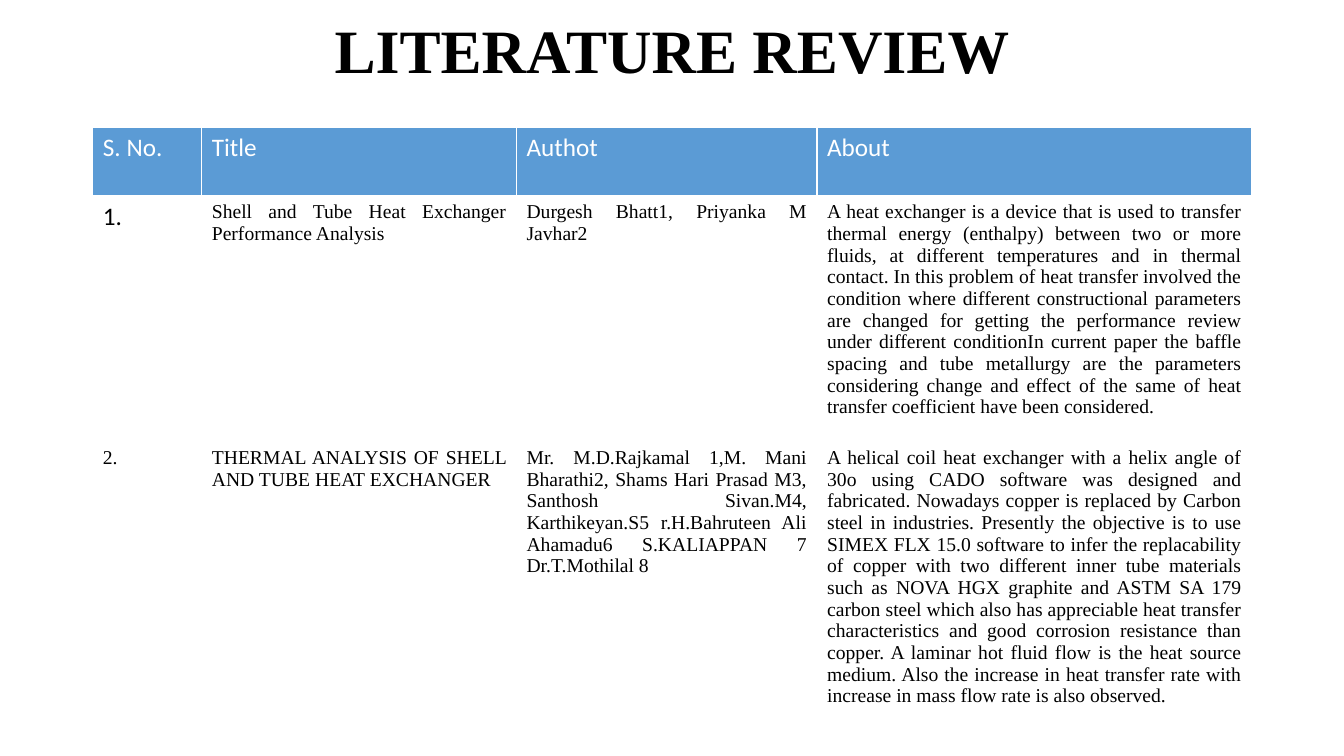
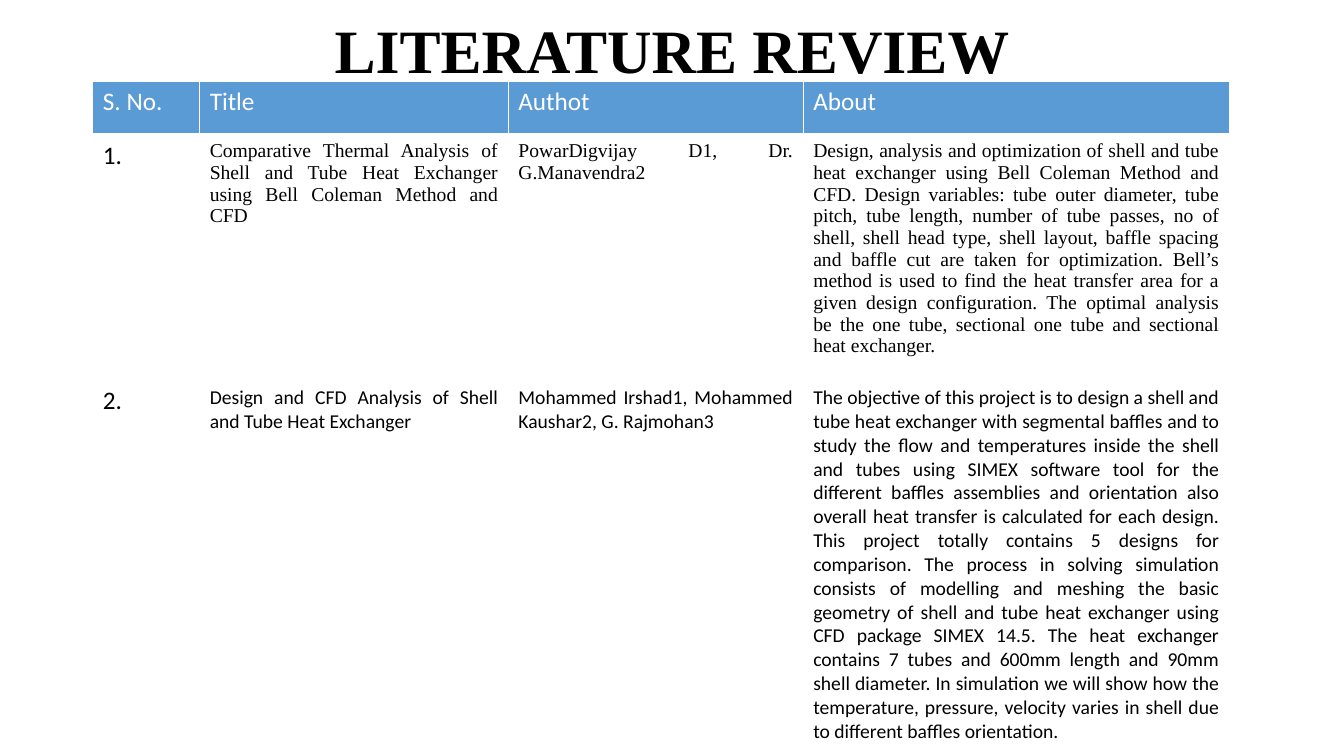
from dataclasses import dataclass

from lxml import etree
from pptx import Presentation
from pptx.dml.color import RGBColor
from pptx.enum.text import MSO_ANCHOR, PP_ALIGN
from pptx.oxml.ns import qn
from pptx.util import Cm, Pt

CENTER = PP_ALIGN.CENTER
JUSTIFY = PP_ALIGN.JUSTIFY
LEFT = PP_ALIGN.LEFT
MIDDLE = MSO_ANCHOR.MIDDLE


@dataclass(frozen=True)
class Theme:
    ink: str = "000000"
    paper: str = "FFFFFF"
    header: str = "5B9BD5"
    sans: str = "Calibri"
    serif: str = "Times New Roman"
    title_size: int = 44
    label_size: int = 18
    body_size: int = 14
    border: int = 1
    header_border: int = 3


THEME = Theme()
LABEL = (THEME.sans, THEME.label_size)
SERIF_BODY = (THEME.serif, THEME.body_size)
SANS_BODY = (THEME.sans, THEME.body_size)

TITLE = "LITERATURE REVIEW"
HEADERS = ["S. No.", "Title", "Authot", "About"]
COLUMN_SHARES = [1.08, 3.12, 2.98, 4.31]
MARGIN = 2.34


class Deck:
    def __init__(self, theme):
        self.theme = theme
        self.prs = Presentation()
        self.prs.slide_width = Cm(33.87)
        self.prs.slide_height = Cm(19.05)
        self.s = None

    def add_slide(self):
        self.s = self.prs.slides.add_slide(self.prs.slide_layouts[6])

    def set_text(self, tf, text, style, color, align, bold=False):
        tf.text = text
        p = tf.paragraphs[0]
        p.alignment = align
        font = p.runs[0].font
        font.name, size = style
        font.size = Pt(size)
        font.bold = bold
        font.color.rgb = RGBColor.from_string(color)
        return p

    def title(self, text):
        sp = self.s.shapes.add_textbox(Cm(MARGIN), Cm(-0.48), Cm(29.21), Cm(3.68))
        tf = sp.text_frame
        tf.word_wrap = True
        tf.vertical_anchor = MIDDLE
        style = (self.theme.serif, self.theme.title_size)
        p = self.set_text(tf, text, style, self.theme.ink, CENTER, bold=True)
        p.line_spacing = 0.9

    def borders(self, cell, bottom):
        tc_pr = cell._tc.get_or_add_tcPr()
        widths = {"lnL": self.theme.border, "lnR": self.theme.border,
                  "lnT": self.theme.border, "lnB": bottom}
        for i, (tag, width) in enumerate(widths.items()):
            ln = etree.Element(qn(f"a:{tag}"), w=str(Pt(width)))
            fill = etree.SubElement(ln, qn("a:solidFill"))
            etree.SubElement(fill, qn("a:srgbClr"), val=self.theme.paper)
            tc_pr.insert(i, ln)

    def cell(self, cell, text, style, color, fill, align, bottom):
        self.set_text(cell.text_frame, text, style, color, align)
        cell.fill.solid()
        cell.fill.fore_color.rgb = RGBColor.from_string(fill)
        self.borders(cell, bottom)

    def review_table(self, top, width, heights, entries):
        t = self.theme
        table = self.s.shapes.add_table(
            len(heights), len(HEADERS), Cm(MARGIN), Cm(top), Cm(width), Cm(sum(heights))
        ).table
        table.horz_banding = False
        for column, share in zip(table.columns, COLUMN_SHARES):
            column.width = Cm(width * share / sum(COLUMN_SHARES))
        for row, height in zip(table.rows, heights):
            row.height = Cm(height)
        for c, text in enumerate(HEADERS):
            self.cell(table.cell(0, c), text, LABEL, t.paper, t.header, LEFT, t.header_border)
        for r, (number_style, body_style, texts) in enumerate(entries, 1):
            for c, text in enumerate([f"{r}.", *texts]):
                style = body_style if c else number_style
                self.cell(table.cell(r, c), text, style, t.ink, t.paper, JUSTIFY, t.border)


REVIEWS = [
    {
        "top": 3.2,
        "width": 29.21,
        "heights": [1.75, 3.53, 6.45],
        "entries": [
            (LABEL, SERIF_BODY, [
                "Shell and Tube Heat Exchanger Performance Analysis",
                "Durgesh Bhatt1, Priyanka M Javhar2",
                "A heat exchanger is a device that is used to transfer thermal energy "
                "(enthalpy) between two or more fluids, at different temperatures and in "
                "thermal contact. In this problem of heat transfer involved the condition "
                "where different constructional parameters are changed for getting the "
                "performance review under different conditionIn current paper the baffle "
                "spacing and tube metallurgy are the parameters considering change and "
                "effect of the same of heat transfer coefficient have been considered.",
            ]),
            (SERIF_BODY, SERIF_BODY, [
                "THERMAL ANALYSIS OF SHELL AND TUBE HEAT EXCHANGER",
                "Mr. M.D.Rajkamal 1,M. Mani Bharathi2, Shams Hari Prasad M3, Santhosh "
                "Sivan.M4, Karthikeyan.S5 r.H.Bahruteen Ali Ahamadu6 S.KALIAPPAN 7 "
                "Dr.T.Mothilal 8",
                "A helical coil heat exchanger with a helix angle of 30o using CADO "
                "software was designed and fabricated. Nowadays copper is replaced by "
                "Carbon steel in industries. Presently the objective is to use SIMEX FLX "
                "15.0 software to infer the replacability of copper with two different "
                "inner tube materials such as NOVA HGX graphite and ASTM SA 179 carbon "
                "steel which also has appreciable heat transfer characteristics and good "
                "corrosion resistance than copper. A laminar hot fluid flow is the heat "
                "source medium. Also the increase in heat transfer rate with increase in "
                "mass flow rate is also observed.",
            ]),
        ],
    },
    {
        "top": 2.06,
        "width": 28.65,
        "heights": [1.35, 5.51, 8.15],
        "entries": [
            (LABEL, SERIF_BODY, [
                "Comparative Thermal Analysis of Shell and Tube Heat Exchanger using "
                "Bell Coleman Method and CFD",
                "PowarDigvijay D1, Dr. G.Manavendra2",
                "Design, analysis and optimization of shell and tube heat exchanger using "
                "Bell Coleman Method and CFD. Design variables: tube outer diameter, tube "
                "pitch, tube length, number of tube passes, no of shell, shell head type, "
                "shell layout, baffle spacing and baffle cut are taken for optimization. "
                "Bell’s method is used to find the heat transfer area for a given design "
                "configuration. The optimal analysis be the one tube, sectional one tube "
                "and sectional heat exchanger.",
            ]),
            (LABEL, SANS_BODY, [
                "Design and CFD Analysis of Shell and Tube Heat Exchanger",
                "Mohammed Irshad1, Mohammed Kaushar2, G. Rajmohan3",
                "The objective of this project is to design a shell and tube heat "
                "exchanger with segmental baffles and to study the flow and temperatures "
                "inside the shell and tubes using SIMEX software tool for the different "
                "baffles assemblies and orientation also overall heat transfer is "
                "calculated for each design. This project totally contains 5 designs for "
                "comparison. The process in solving simulation consists of modelling and "
                "meshing the basic geometry of shell and tube heat exchanger using CFD "
                "package SIMEX 14.5. The heat exchanger contains 7 tubes and 600mm length "
                "and 90mm shell diameter. In simulation we will show how the temperature, "
                "pressure, velocity varies in shell due to different baffles orientation.",
            ]),
        ],
    },
]


def main():
    deck = Deck(THEME)
    for review in REVIEWS:
        deck.add_slide()
        deck.title(TITLE)
        deck.review_table(**review)
    deck.prs.save("out.pptx")


if __name__ == "__main__":
    main()
